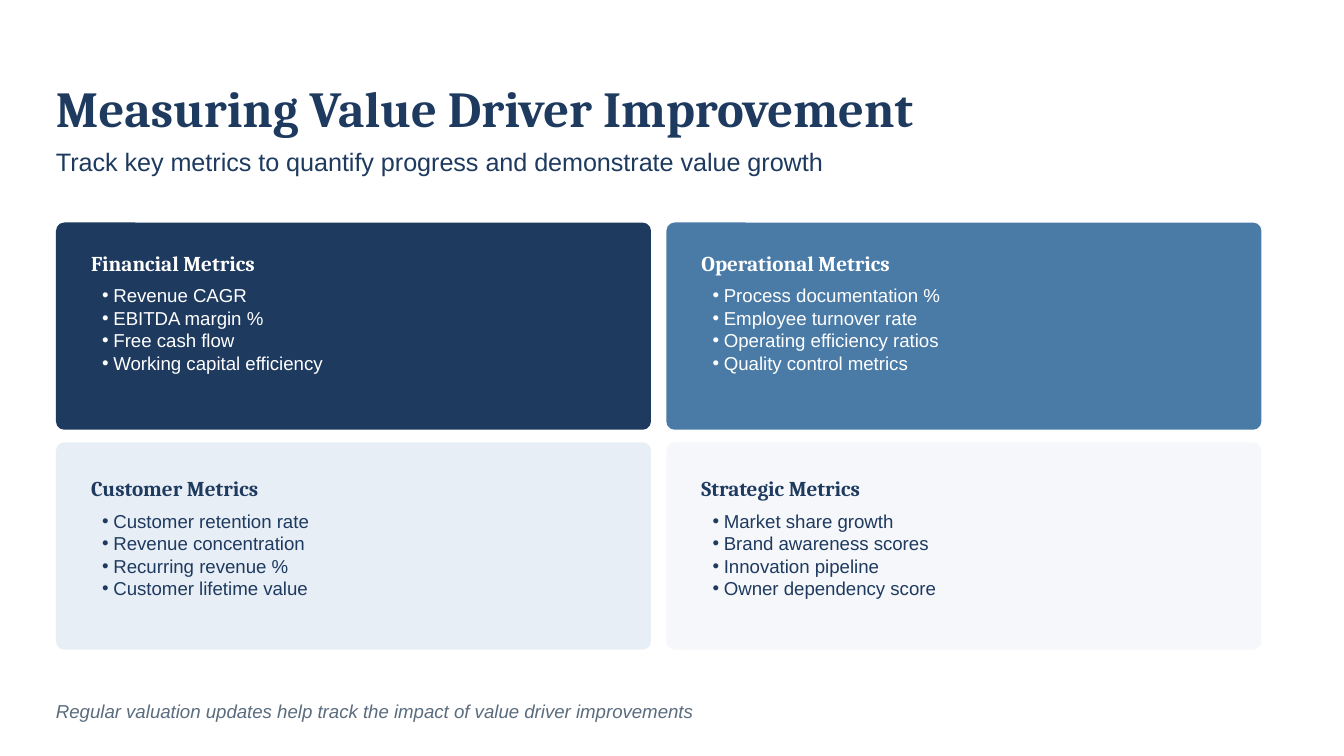
from lxml.etree import SubElement
from pptx import Presentation
from pptx.dml.color import RGBColor
from pptx.enum.shapes import MSO_SHAPE as Shape
from pptx.enum.text import MSO_ANCHOR as Anchor, MSO_AUTO_SIZE as AutoSize, PP_ALIGN as Align
from pptx.oxml.ns import qn
from pptx.util import Pt

EMU_PER_PX = 9525
COLORS = {"navy": "1E3A5F", "blue": "4A7BA7", "ice": "E8EEF5", "mist": "F5F7FA",
          "white": "FFFFFF", "slate": "5A6C7D"}
FONTS = {
    "title": {"name": "Cambria", "size": Pt(27), "bold": True},
    "subtitle": {"name": "Arial", "size": Pt(13.5)},
    "heading": {"name": "Cambria", "size": Pt(11.25), "bold": True},
    "metric": {"name": "Arial", "size": Pt(10)},
    "footnote": {"name": "Arial", "size": Pt(10), "italic": True},
}
SPACING = {
    "title": {"line_spacing": Pt(30), "space_after": Pt(6)},
    "subtitle": {"line_spacing": Pt(21), "space_after": Pt(9)},
    "heading": {"line_spacing": Pt(13.5), "space_after": Pt(4.5)},
    "metric": {},
    "footnote": {"line_spacing": Pt(14)},
}
CARD_WIDTH, CARD_HEIGHT = 425, 148
COLUMN_LEFTS = (40, 476)
ROWS = ((159, 20), (316, 24))
CARDS = [
    [("Financial Metrics", "navy", "white",
      ["Revenue CAGR", "EBITDA margin %", "Free cash flow", "Working capital efficiency"]),
     ("Operational Metrics", "blue", "white",
      ["Process documentation %", "Employee turnover rate", "Operating efficiency ratios",
       "Quality control metrics"])],
    [("Customer Metrics", "ice", "navy",
      ["Customer retention rate", "Revenue concentration", "Recurring revenue %",
       "Customer lifetime value"]),
     ("Strategic Metrics", "mist", "navy",
      ["Market share growth", "Brand awareness scores", "Innovation pipeline",
       "Owner dependency score"])],
]


def px(length):
    """Turn px into EMU."""
    return length * EMU_PER_PX


def apply(target, values):
    """Set each named attribute on the target."""
    for name, value in values.items():
        setattr(target, name, value)


def rgb(color):
    """Look up a colour by name."""
    return RGBColor.from_string(COLORS[color])


def add_bullet(paragraph):
    """Give the paragraph a hanging bullet."""
    properties = paragraph._p.get_or_add_pPr()
    properties.set("marL", str(px(8)))
    properties.set("indent", str(px(-8)))
    SubElement(properties, qn("a:buFont")).set("typeface", "Arial")
    SubElement(properties, qn("a:buChar")).set("char", "•")


def write(holder, lines, style, color, bulleted=False):
    """Fill a text holder with one paragraph per line."""
    frame = holder.text_frame
    apply(frame, {"margin_left": px(8) if bulleted else 0, "margin_top": 0, "margin_right": 0,
                  "margin_bottom": 0, "word_wrap": True, "auto_size": AutoSize.NONE,
                  "vertical_anchor": Anchor.TOP})
    for index, line in enumerate(lines):
        paragraph = frame.add_paragraph() if index else frame.paragraphs[0]
        if bulleted:
            add_bullet(paragraph)
        apply(paragraph, {"alignment": Align.LEFT, **SPACING[style]})
        run = paragraph.add_run()
        run.text = line
        apply(run.font, FONTS[style])
        run.font.color.rgb = rgb(color)


def add_text(slide, box, lines, style, color, bulleted=False):
    """Add a text box at the given px box."""
    holder = slide.shapes.add_textbox(*map(px, box))
    write(holder, lines, style, color, bulleted)


def add_header(slide, left, top, width):
    """Place the title and the subtitle below it."""
    title = slide.shapes.title
    apply(title, {"left": px(left), "top": px(top), "width": px(766), "height": px(40)})
    write(title, ["Measuring Value Driver Improvement"], "title", "navy")
    add_text(slide, (left, top + 40, width, 28),
             ["Track key metrics to quantify progress and demonstrate value growth"],
             "subtitle", "navy")


def add_card(slide, box, inset, heading, fill, ink, metrics):
    """Place a rounded card with its heading and metrics."""
    left, top, width, height = box
    card = slide.shapes.add_shape(Shape.ROUNDED_RECTANGLE, *map(px, box))
    card.adjustments[0] = 0.04
    card.shadow.inherit = False
    card.fill.solid()
    card.fill.fore_color.rgb = rgb(fill)
    card.line.fill.background()
    text_left, text_width = left + 25, width // 2
    list_top = inset + 24
    add_text(slide, (text_left, top + inset, text_width, 24), [heading], "heading", ink)
    add_text(slide, (text_left, top + list_top, text_width, height - list_top), metrics,
             "metric", ink, bulleted=True)


def add_card_grid(slide):
    """Place the cards in rows and columns."""
    for (top, inset), row in zip(ROWS, CARDS):
        for left, card in zip(COLUMN_LEFTS, row):
            add_card(slide, (left, top, CARD_WIDTH, CARD_HEIGHT), inset, *card)


def main():
    """Build and save the slide."""
    deck = Presentation()
    apply(deck, {"slide_width": px(960), "slide_height": px(540)})
    slide = deck.slides.add_slide(deck.slide_layouts.get_by_name("Title Only"))
    add_header(slide, 40, 58, 898)
    add_card_grid(slide)
    add_text(slide, (40, 497, 898, 18),
             ["Regular valuation updates help track the impact of value driver improvements"],
             "footnote", "slate")
    deck.save("out.pptx")


if __name__ == "__main__":
    main()
